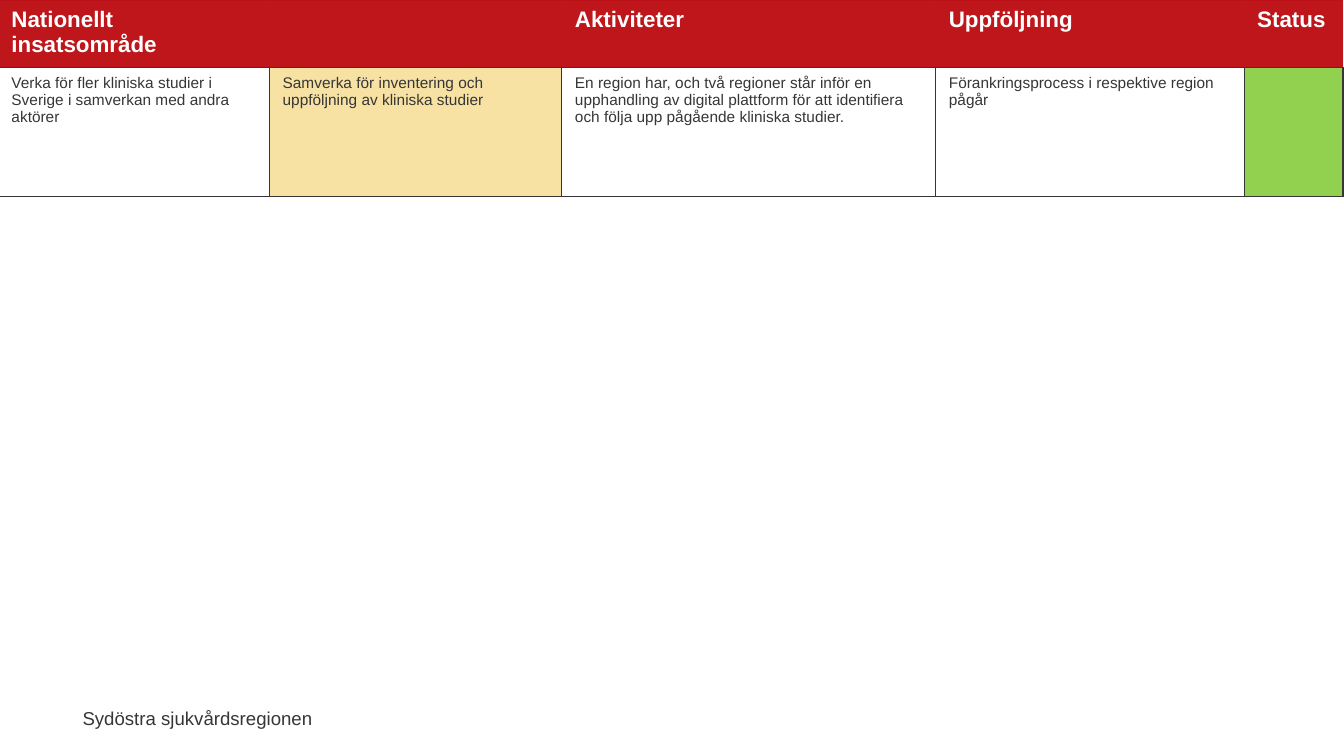
from dataclasses import dataclass

from lxml import etree
from pptx import Presentation
from pptx import util as u
from pptx.dml.color import RGBColor
from pptx.enum import text
from pptx.oxml.ns import qn


@dataclass(frozen=True)
class Theme:
    """Colours, font and type sizes of the slide."""
    font: str = "Arial"
    red: str = "BC1018"
    header: str = "BE161B"
    ink: str = "363636"
    white: str = "FFFFFF"
    sand: str = "F7E2A4"
    green: str = "92D050"
    header_size: float = 16
    body_size: float = 11
    footer_size: float = 13.3


THEME = Theme()
COLUMN_WIDTHS = (193.7, 208.8, 267.1, 220.3, 70.6)
ROW_HEIGHTS = (48.2, 92.2)
HEADERS = ("Nationellt insatsområde", "", "Aktiviteter", "Uppföljning", "Status")
ACTIVITY = (
    ("Verka för fler kliniska studier i Sverige i samverkan med andra aktörer", None),
    ("Samverka för inventering och uppföljning av kliniska studier", THEME.sand),
    ("En region har, och två regioner står inför en upphandling av digital "
     "plattform för att identifiera och följa upp pågående kliniska studier.", None),
    ("Förankringsprocess i respektive region pågår", None),
    ("", THEME.green),
)


def add_run(paragraph, wording, size, colour, bold=False):
    """Add one formatted run to a paragraph."""
    run = paragraph.add_run()
    run.text = wording
    run.font.name = THEME.font
    run.font.size = u.Pt(size)
    run.font.bold = bold
    run.font.color.rgb = RGBColor.from_string(colour)


def set_borders(cell, borders):
    """Draw the left, right, top and bottom borders given as colour and width."""
    properties = cell._tc.get_or_add_tcPr()
    for side, (colour, width) in zip(("lnL", "lnR", "lnT", "lnB"), borders):
        line = etree.SubElement(properties, qn(f"a:{side}"), w=str(u.Pt(width)))
        fill = etree.SubElement(line, qn("a:solidFill"))
        etree.SubElement(fill, qn("a:srgbClr"), val=colour)


def format_cell(cell, wording, size, colour, bold, fill, borders):
    """Set the text, margins, borders and fill of one table cell."""
    cell.margin_left = cell.margin_right = u.Pt(9.4)
    cell.margin_top = cell.margin_bottom = u.Pt(5)
    set_borders(cell, borders)
    if fill:
        cell.fill.solid()
        cell.fill.fore_color.rgb = RGBColor.from_string(fill)
    else:
        cell.fill.background()
    if wording:
        add_run(cell.text_frame.paragraphs[0], wording, size, colour, bold)


def add_activity_table(slide, left, top, width, height):
    """Place the table of activities, follow-up and status in the given box."""
    table = slide.shapes.add_table(
        len(ROW_HEIGHTS), len(COLUMN_WIDTHS),
        u.Pt(left), u.Pt(top), u.Pt(width), u.Pt(height)).table
    for column, share in zip(table.columns, COLUMN_WIDTHS):
        column.width = u.Pt(width * share / sum(COLUMN_WIDTHS))
    for row, share in zip(table.rows, ROW_HEIGHTS):
        row.height = u.Pt(height * share / sum(ROW_HEIGHTS))

    edge, rule = (THEME.red, 0.75), (THEME.ink, 1)
    header_edge = (THEME.header, 0.75)
    for index, (heading, (wording, fill)) in enumerate(zip(HEADERS, ACTIVITY)):
        format_cell(table.cell(0, index), heading, THEME.header_size, THEME.white,
                    True, THEME.header, (header_edge, header_edge, edge, rule))
        format_cell(table.cell(1, index), wording, THEME.body_size, THEME.ink,
                    False, fill, (rule,) * 4)


def add_region_footer(slide, left, top, width, height):
    """Place the name of the care region in the given box."""
    box = slide.shapes.add_textbox(u.Pt(left), u.Pt(top), u.Pt(width), u.Pt(height))
    frame = box.text_frame
    frame.word_wrap = False
    frame.auto_size = text.MSO_AUTO_SIZE.SHAPE_TO_FIT_TEXT
    paragraph = frame.paragraphs[0]
    paragraph.alignment = text.PP_ALIGN.RIGHT
    add_run(paragraph, "Sydöstra sjukvårdsregionen", THEME.footer_size, THEME.ink)


def main():
    """Build the slide and save the presentation."""
    presentation = Presentation()
    presentation.slide_width, presentation.slide_height = u.Pt(960), u.Pt(540)
    slide = presentation.slides.add_slide(presentation.slide_layouts[6])
    add_region_footer(slide, 50.4, 501.1, 180, 23.8)
    add_activity_table(slide, -1.2, 0, sum(COLUMN_WIDTHS), sum(ROW_HEIGHTS))
    presentation.save("out.pptx")


if __name__ == "__main__":
    main()
